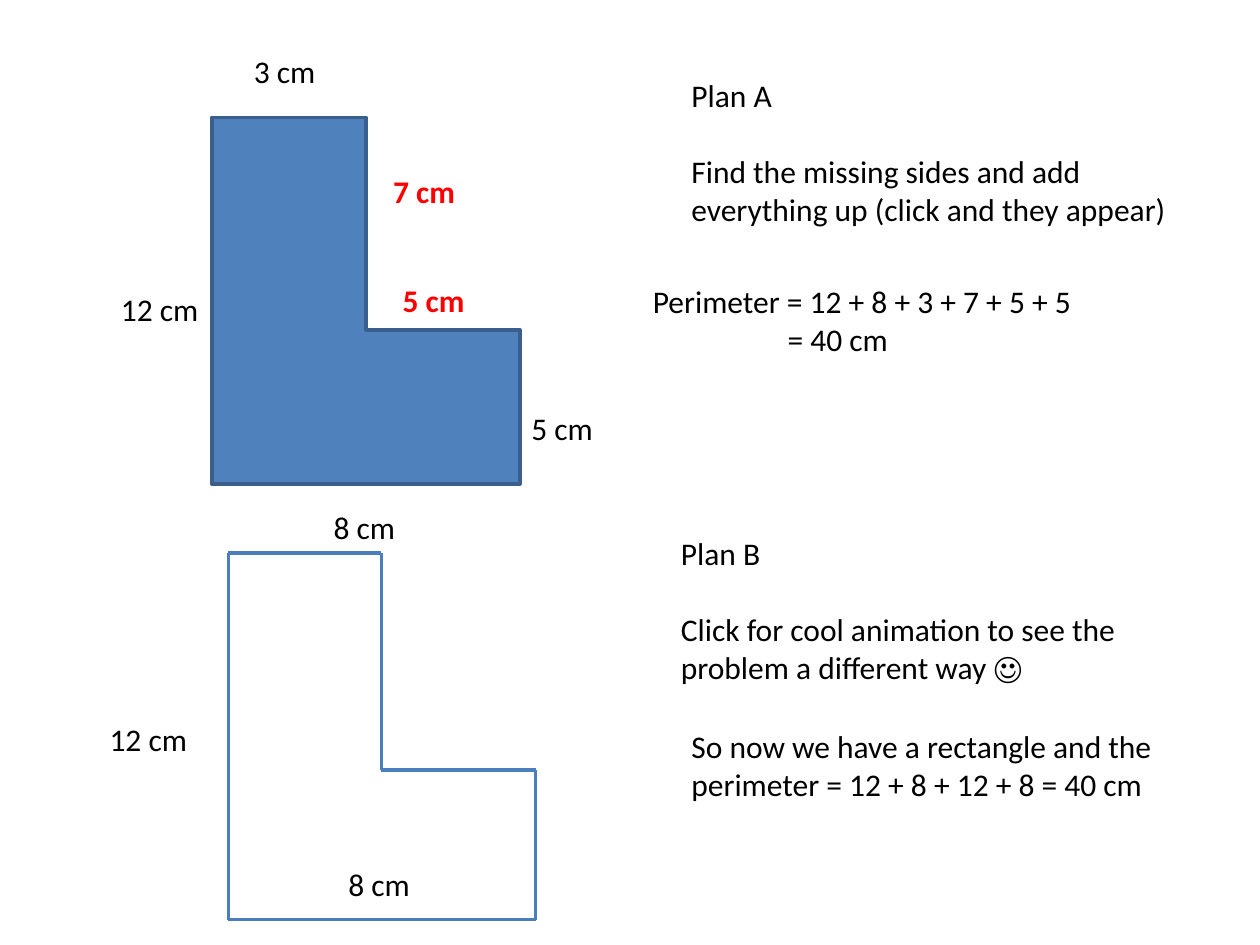
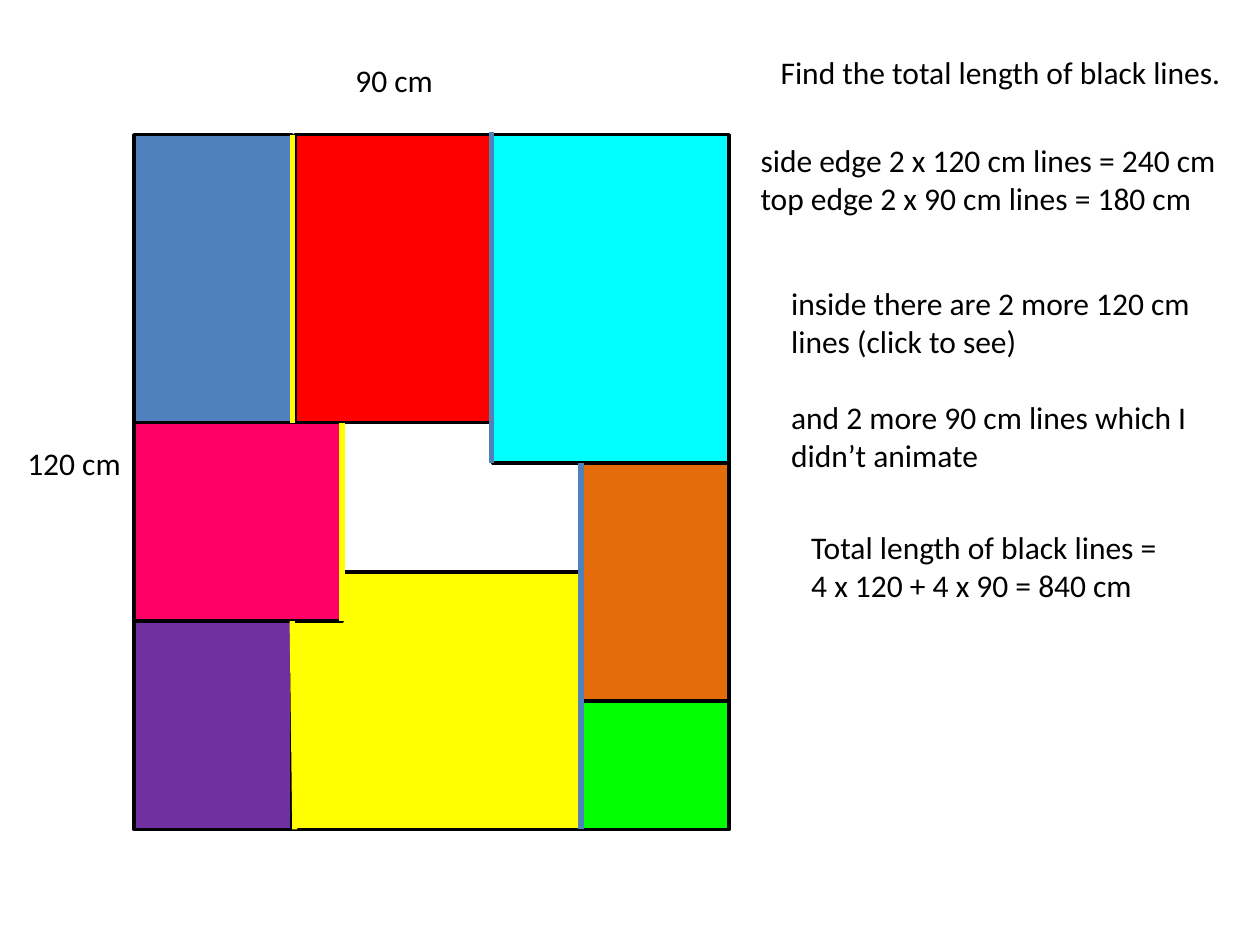
import dataclasses
import itertools

import pptx
import pptx.dml.color
import pptx.enum.shapes
import pptx.enum.text
import pptx.oxml
import pptx.oxml.ns
import pptx.util

Pt = pptx.util.Pt
Shapes = pptx.enum.shapes.MSO_SHAPE


@dataclasses.dataclass(frozen=True)
class Theme:
    font: str = "Calibri"
    size: float = 18
    blank_line: float = 22
    label_height: float = 29
    outline: float = 2
    trace: float = 3
    black: str = "000000"
    answer: str = "FF0000"
    blue: str = "4F81BD"
    blue_edge: str = "3A5F8C"
    blue_line: str = "4B7EBC"
    red: str = "FF0000"
    purple: str = "7030A0"
    yellow: str = "FFFF00"
    green: str = "00FF00"
    pink: str = "FF0066"
    orange: str = "E46C0A"
    cyan: str = "00FFFF"


THEME = Theme()


def rgb(value):
    return pptx.dml.color.RGBColor.from_string(value)


class Page:
    """One slide, drawn in points with the shared theme."""

    def __init__(self, deck, theme=THEME):
        self.theme = theme
        self.slide = deck.slides.add_slide(deck.slide_layouts[6])

    def block(self, left, top, right, bottom, fill, edge, kind=Shapes.RECTANGLE):
        shape = self.slide.shapes.add_shape(
            kind, Pt(left), Pt(top), Pt(right - left), Pt(bottom - top))
        shape.shadow.inherit = False
        shape.fill.solid()
        shape.fill.fore_color.rgb = rgb(fill)
        shape.line.color.rgb = rgb(edge)
        shape.line.width = Pt(self.theme.outline)

    def line(self, start, end, color, width):
        connector = self.slide.shapes.add_connector(
            pptx.enum.shapes.MSO_CONNECTOR.STRAIGHT, *map(Pt, (*start, *end)))
        connector.line.color.rgb = rgb(color)
        connector.line.width = Pt(width)
        connector._element.spPr.append(pptx.oxml.parse_xml(
            f"<a:effectLst {pptx.oxml.ns.nsdecls('a')}/>"))

    def text(self, left, top, width, height, *lines, gap=0, last_indent=0,
             color=None, bold=False):
        box = self.slide.shapes.add_textbox(Pt(left), Pt(top), Pt(width), Pt(height))
        frame = box.text_frame
        frame.word_wrap = True
        frame.auto_size = pptx.enum.text.MSO_AUTO_SIZE.SHAPE_TO_FIT_TEXT
        frame.text = "\n".join(lines)
        for paragraph in frame.paragraphs:
            paragraph.font.name = self.theme.font
            paragraph.font.size = Pt(self.theme.size)
            paragraph.font.bold = bold
            paragraph.font.color.rgb = rgb(color or self.theme.black)
        for paragraph in frame.paragraphs[1:]:
            paragraph.space_before = Pt(gap)
        if last_indent:
            properties = frame.paragraphs[-1]._p.get_or_add_pPr()
            properties.set("marL", str(Pt(last_indent)))
            properties.set("indent", "0")

    def label(self, left, top, length, width=51, **style):
        self.text(left, top, width, self.theme.label_height, length, **style)


def perimeter_slide(deck):
    page = Page(deck)
    blank = THEME.blank_line

    # Plan A: filled L-shape with its sides
    page.block(121, 67, 297, 276.5, THEME.blue, THEME.blue_edge, Shapes.CORNER)
    page.label(296.5, 230, "5 cm")
    page.label(62, 162, "12 cm", 68)
    page.label(183.5, 287, "8 cm")
    page.label(138, 26, "3 cm")
    page.text(388, 40, 306, 94, "Plan A",
              "Find the missing sides and add everything up (click and they appear)",
              gap=blank)
    page.label(217.5, 94.5, "7 cm", color=THEME.answer, bold=True)
    page.label(223, 157, "5 cm", color=THEME.answer, bold=True)
    page.text(366, 157.5, 258, 51, "Perimeter = 12 + 8 + 3 + 7 + 5 + 5", "= 40 cm",
              last_indent=77)

    # Plan B: the same L-shape as separate lines
    left, inner, right = 130.5, 218, 306
    top, step, bottom = 316, 440, 525.5
    corners = [(left, top), (left, bottom), (right, bottom), (right, step),
               (inner, step), (inner, top), (left, top)]
    for start, end in itertools.pairwise(corners):
        page.line(start, end, THEME.blue_line, THEME.outline)
    page.text(382, 301.5, 306, 94, "Plan B",
              "Click for cool animation to see the problem a different way ☺", gap=blank)
    page.text(388, 412, 284, 51,
              "So now we have a rectangle and the perimeter = 12 + 8 + 12 + 8 = 40 cm")
    page.label(192, 491, "8 cm")
    page.label(55.5, 408, "12 cm", 68)


def black_lines_slide(deck):
    page = Page(deck)

    # Coloured tiles on shared edges
    left, first, pink_right, second, third, right = 76.5, 167, 195.5, 281.5, 332, 416.5
    top, upper, cyan_bottom, lower, green_top, bottom = 77, 241.5, 264.5, 355, 400.5, 474
    tiles = [
        (left, top, first, upper, THEME.blue),
        (first + 1.5, top, second, upper, THEME.red),
        (left, lower, first, bottom, THEME.purple),
        (first, 327, third, bottom, THEME.yellow),
        (third, green_top, right, bottom, THEME.green),
        (left, upper, pink_right, lower, THEME.pink),
        (third, cyan_bottom, right, green_top, THEME.orange),
        (second, top, right, cyan_bottom, THEME.cyan),
    ]
    for tile in tiles:
        page.block(*tile, THEME.black)

    # Side lengths and working
    page.label(196, 31.5, "90 cm", 63)
    page.label(8.5, 250, "120 cm", 68)
    page.text(439, 26.5, 272, 29, "Find the total length of black lines.")
    page.text(427.5, 77, 284, 51, "side edge 2 x 120 cm lines = 240 cm",
              "top edge 2 x 90 cm lines = 180 cm")
    page.text(445, 159, 244, 116.5, "inside there are 2 more 120 cm lines (click to see)",
              "and 2 more 90 cm lines which I didn’t animate", gap=THEME.blank_line)

    # Inner vertical lines, each adding up to 120 cm
    traces = [
        ((first, top), (first, upper), THEME.yellow),
        ((pink_right, upper), (pink_right, lower), THEME.yellow),
        ((first, lower), (first + 1.5, bottom), THEME.yellow),
        ((third, cyan_bottom), (third, bottom), THEME.blue),
        ((second - 0.5, top - 1.5), (second - 0.5, cyan_bottom), THEME.blue),
    ]
    for trace in traces:
        page.line(*trace, THEME.trace)
    page.text(456.5, 298, 255, 51, "Total length of black lines =",
              "4 x 120 + 4 x 90 = 840 cm")


def main():
    deck = pptx.Presentation()
    deck.slide_width, deck.slide_height = Pt(720), Pt(540)
    perimeter_slide(deck)
    black_lines_slide(deck)
    deck.save("out.pptx")


if __name__ == "__main__":
    main()
